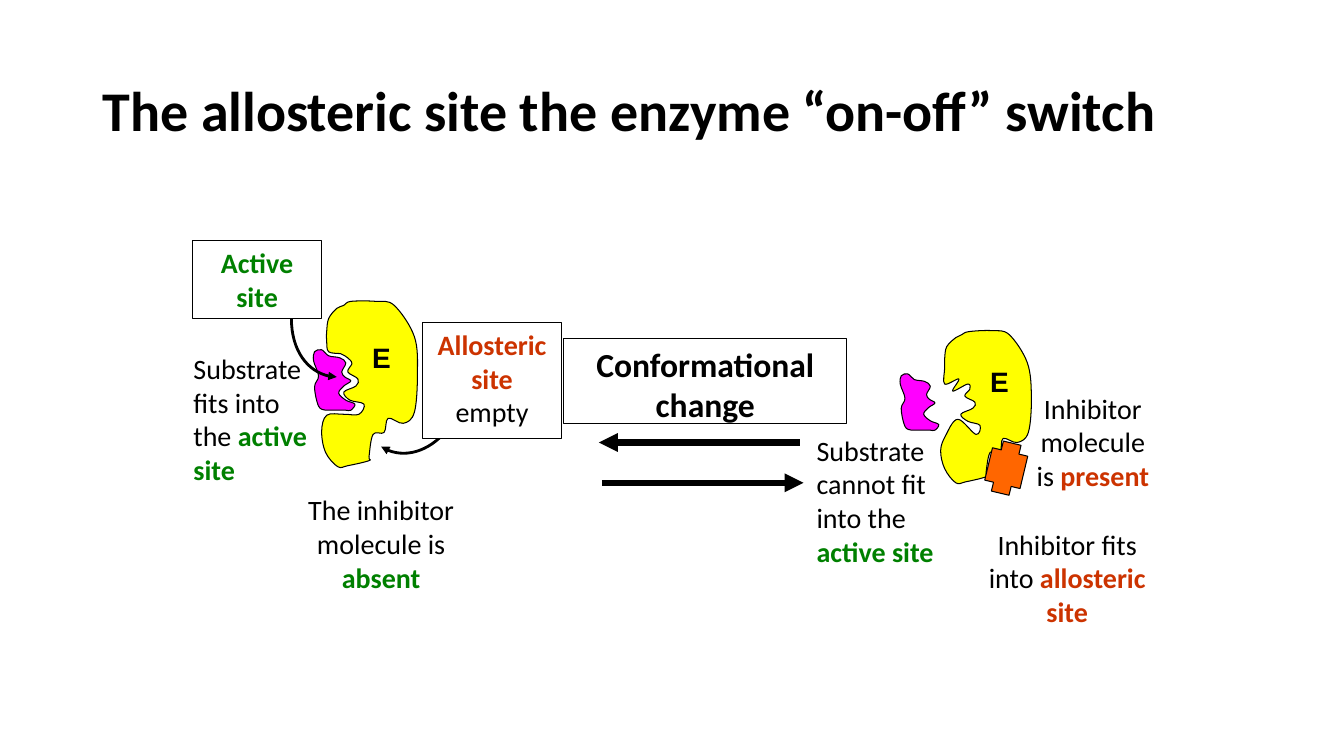
from lxml.etree import SubElement
from pptx import Presentation
from pptx.dml.color import RGBColor
from pptx.enum.shapes import MSO_CONNECTOR, MSO_SHAPE
from pptx.enum.text import MSO_ANCHOR, PP_ALIGN
from pptx.oxml.ns import qn
from pptx.util import Pt

PX = 9144  # 100 px to the inch
COLORS = {
    "black": "000000", "white": "FFFFFF", "green": "008000", "red": "CC3300",
    "yellow": "FFFF00", "magenta": "FF00FF", "orange": "FF6600",
}

presentation = Presentation()
presentation.slide_width = 1333 * PX
presentation.slide_height = 750 * PX
slide = presentation.slides.add_slide(presentation.slide_layouts[6])


def style_shape(shape, fill, width=0.75, arrow_end=None):
    """Set fill, black line and an optional arrowhead (a:headEnd or a:tailEnd)."""
    if fill:
        shape.fill.solid()
        shape.fill.fore_color.rgb = RGBColor.from_string(COLORS[fill])
    elif arrow_end == "a:headEnd":
        shape.fill.background()
    shape.line.color.rgb = RGBColor.from_string(COLORS["black"])
    shape.line.width = Pt(width)
    if arrow_end:
        SubElement(shape.line._get_or_add_ln(), qn(arrow_end), type="triangle")
    if arrow_end == "a:tailEnd":
        SubElement(shape._element.spPr, qn("a:effectLst"))
    else:
        shape.shadow.inherit = False


def add_curve(points, controls=None):
    """Join points by Bézier curves; without controls, close them smoothly."""
    closed = controls is None
    if closed:
        padded = points[-1:] + points + points[:2]
        controls = [
            [tuple(q + (r - p) / 6 for p, q, r in zip(a, b, c)),
             tuple(r - (s - q) / 6 for q, r, s in zip(b, c, d))]
            for a, b, c, d in zip(padded, padded[1:], padded[2:], padded[3:])]
        points = points + points[:1]
    scaled = [(x * PX, y * PX) for x, y in points]
    builder = slide.shapes.build_freeform(*scaled[0])
    builder.add_line_segments(scaled[1:], close=closed)
    shape = builder.convert_to_shape()
    segments = list(shape._element.iter(qn("a:lnTo")))
    for segment, pair in zip(segments, controls):
        segment.tag = qn("a:cubicBezTo")
        for index, (x, y) in enumerate(pair):
            control = segment.makeelement(
                qn("a:pt"), x=str(round(x * PX - shape.left)),
                y=str(round(y * PX - shape.top)))
            segment.insert(index, control)
    return shape


active_enzyme = [
    (338, 351), (326, 349), (324, 339), (324, 329), (326, 316), (334, 306),
    (341, 303), (348, 299), (373, 299), (391, 303), (411, 334), (414, 371),
    (411, 409), (400, 420), (385, 415), (381, 429), (370, 431), (366, 453),
    (366, 457), (345, 462), (335, 463), (323, 449), (319, 428), (324, 412),
    (341, 411), (356, 411), (361, 401), (347, 397), (341, 389), (353, 383),
    (355, 376), (345, 369), (349, 361), (347, 357), (342, 353),
]
inhibited_enzyme = [
    (951, 376), (937, 381), (937, 365), (937, 356), (939, 344), (948, 335),
    (954, 332), (961, 329), (984, 328), (1001, 332), (1019, 360), (1023, 394),
    (1020, 429), (1009, 439), (995, 435), (992, 448), (982, 449), (978, 469),
    (978, 473), (958, 478), (948, 479), (937, 465), (933, 447), (938, 432),
    (950, 416), (968, 431), (972, 422), (960, 418), (953, 411), (965, 405),
    (967, 399), (957, 393), (962, 386), (960, 381), (945, 388),
]
# Substrate outline, measured from its own top left corner
substrate = [
    (16, 6), (27, 8), (33, 13), (29, 22), (32, 27), (38, 31), (31, 36),
    (26, 43), (33, 50), (42, 54), (38, 60), (33, 60), (26, 60), (18, 60),
    (13, 60), (6, 56), (2, 37), (6, 26), (1, 11), (2, 2), (9, 0),
]
for enzyme in (active_enzyme, inhibited_enzyme):
    style_shape(add_curve(enzyme), "yellow")
for left, top, scale in ((310, 347, 1), (892, 371, 0.93)):
    outline = [(left + scale * x, top + scale * y) for x, y in substrate]
    style_shape(add_curve(outline), "magenta")

# Each pointer: tip, two controls, tail
for tip, *bend, tail in (
        [(334, 374), (309, 374), (289, 348), (289, 316)],
        [(378, 443), (398, 457), (429, 447), (448, 421)]):
    style_shape(add_curve([tip, tail], [bend]), None, 2, "a:headEnd")

inhibitor = slide.shapes.add_shape(
    MSO_SHAPE.CROSS, 980 * PX, 439 * PX, 36 * PX, 51 * PX)
inhibitor.adjustments[0] = 0.25
inhibitor.rotation = 13.5
style_shape(inhibitor, "orange")

for start, end, y in ((793, 594, 439), (597, 797, 479)):
    arrow = slide.shapes.add_connector(
        MSO_CONNECTOR.STRAIGHT, start * PX, y * PX, end * PX, y * PX)
    style_shape(arrow, None, 4.5, "a:tailEnd")

# Box, framed, alignment, font, size, paragraphs of (text, colour, bold) runs
LEFT, CENTER = PP_ALIGN.LEFT, PP_ALIGN.CENTER
labels = [
    ((92, 40, 1150, 145), False, LEFT, "Calibri", 40,
     [[("The allosteric site the enzyme “on-off” switch", "black", True)]]),
    ((191, 239, 128, 77), True, CENTER, "Calibri", 20,
     [[("Active site", "green", True)]]),
    ((419, 320, 138, 115), True, CENTER, "Calibri", 20,
     [[("Allosteric site", "red", True), (" empty", "black", False)]]),
    ((559, 336, 281, 84), True, CENTER, "Calibri", 24,
     [[("Conformational change", "black", True)]]),
    ((182, 344, 136, 135), False, LEFT, "Calibri", 20,
     [[("Substrate", "black", False)],
      [("fits into the ", "black", False), ("active site", "green", True)]]),
    ((292, 484, 172, 115), False, CENTER, "Calibri", 20,
     [[("The inhibitor molecule is ", "black", False), ("absent", "green", True)]]),
    ((800, 425, 142, 155), False, LEFT, "Calibri", 20,
     [[("Substrate", "black", False)],
      [("cannot fit into the ", "black", False), ("active site", "green", True)]]),
    ((1016, 383, 136, 122), False, CENTER, "Calibri", 20,
     [[("Inhibitor molecule is ", "black", False), ("present", "red", True)]]),
    ((967, 518, 183, 118), False, CENTER, "Calibri", 20,
     [[("Inhibitor fits into ", "black", False), ("allosteric site", "red", True)]]),
    ((362, 335, 32, 51), False, LEFT, "Arial", 20, [[("E", "black", True)]]),
    ((975, 359, 32, 51), False, LEFT, "Arial", 20, [[("E", "black", True)]]),
]
for box, framed, alignment, font_name, size, paragraphs in labels:
    place = [value * PX for value in box]
    if framed:
        shape = slide.shapes.add_shape(MSO_SHAPE.RECTANGLE, *place)
        style_shape(shape, "white")
    else:
        shape = slide.shapes.add_textbox(*place)
    is_title, is_enzyme_letter = size == 40, font_name == "Arial"
    side, edge = (7, 3) if is_enzyme_letter else (10, 5)
    frame_format = {
        "word_wrap": True,
        "vertical_anchor": MSO_ANCHOR.MIDDLE if is_title else MSO_ANCHOR.TOP,
        "margin_left": side * PX, "margin_right": side * PX,
        "margin_top": edge * PX, "margin_bottom": edge * PX,
    }
    for name, value in frame_format.items():
        setattr(shape.text_frame, name, value)
    for index, runs in enumerate(paragraphs):
        paragraph = (shape.text_frame.add_paragraph() if index
                     else shape.text_frame.paragraphs[0])
        paragraph.alignment = alignment
        if is_title:
            paragraph.line_spacing = 0.9
        for text, color, bold in runs:
            run = paragraph.add_run()
            run.text = text
            run.font.color.rgb = RGBColor.from_string(COLORS[color])
            font_format = {"name": font_name, "size": Pt(size), "bold": bold}
            for name, value in font_format.items():
                setattr(run.font, name, value)

presentation.save("out.pptx")
